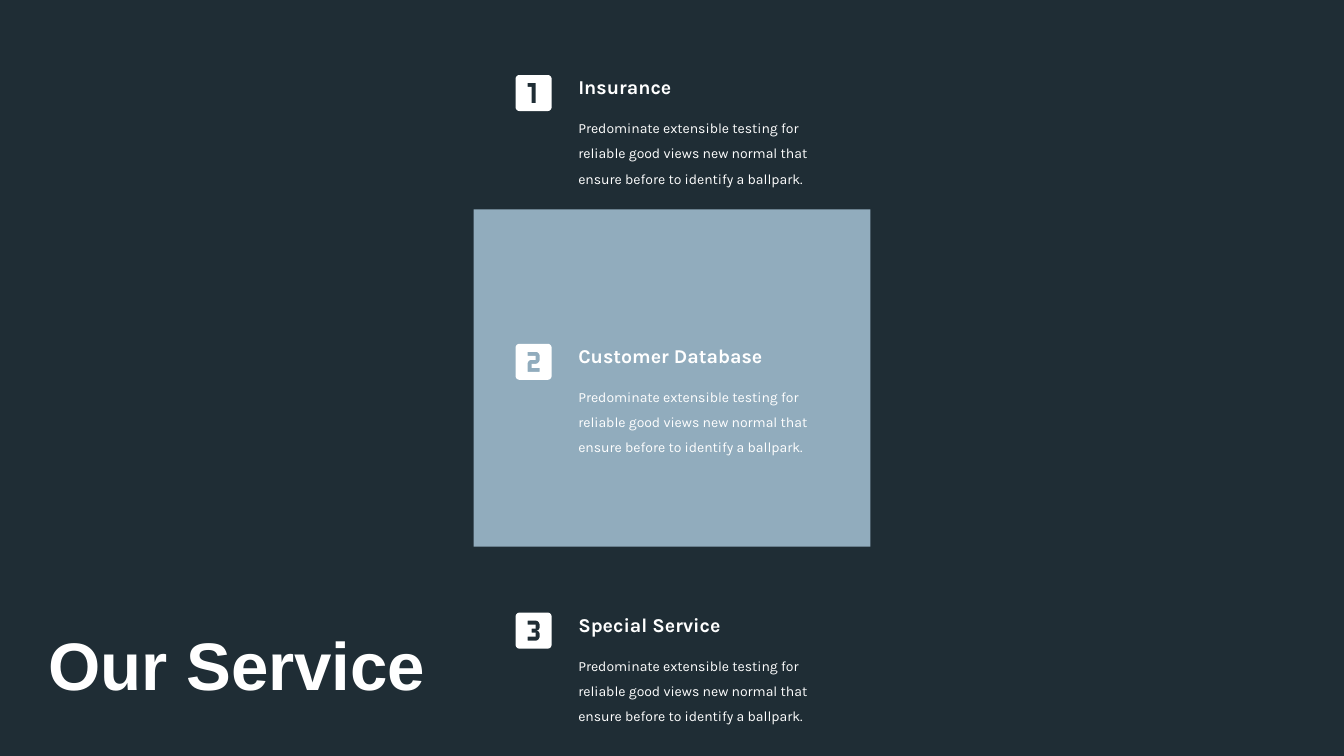
from math import cos, sin, pi, hypot
from pptx import Presentation
from pptx.util import Pt
from pptx.dml.color import RGBColor
from pptx.enum import shapes, text

DARK, BLUE, WHITE = "1F2D35", "91ACBD", "FFFFFF"
TITLE = "Our Service"
BODY = ("Predominate extensible testing for reliable good views "
        "new normal that ensure before to identify a ballpark.")
FRAME = [(0, 0, 2), (18, 0, 2), (18, 18, 2), (0, 18, 2)]
ONE = [(10, 14, 0), (10, 4, 0), (6, 4, 0), (6, 6, 0), (8, 6, 0), (8, 14, 0)]
TWO = [(12, 4, 2), (6, 4, 0), (6, 6, 0), (10, 6, 0), (10, 8, 0), (6, 8, 2),
       (6, 14, 0), (12, 14, 0), (12, 12, 0), (8, 12, 0), (8, 10, 0), (12, 10, 2)]
THREE = [(12, 4, 2), (6, 4, 0), (6, 6, 0), (10, 6, 0), (10, 8, 0), (8, 8, 0),
         (8, 10, 0), (10, 10, 0), (10, 12, 0), (6, 12, 0), (6, 14, 0),
         (12, 14, 2), (12, 9, 1.5), (10.5, 9, 0), (12, 9, 1.5)]
ITEMS = [("Insurance", ONE), ("Customer Database", TWO), ("Special Service", THREE)]

TOP, PITCH = 53.6, 192
ICON_X, TEXT_X = 368.3, 413.1
UNIT, STEPS = 1.43, 8


def color(code):
    return RGBColor.from_string(code)


def paint(shape, code):
    shape.shadow.inherit = False
    shape.fill.solid()
    shape.fill.fore_color.rgb = color(code)
    shape.line.fill.background()


def write(shape, words, size, font, bold, gap=None):
    frame = shape.text_frame
    frame.word_wrap = True
    frame.auto_size = text.MSO_AUTO_SIZE.SHAPE_TO_FIT_TEXT
    frame.vertical_anchor = text.MSO_ANCHOR.TOP
    frame.margin_left = frame.margin_right = 0
    frame.margin_top = frame.margin_bottom = 0
    para = frame.paragraphs[0]
    para.alignment = text.PP_ALIGN.LEFT
    if gap:
        para.line_spacing = gap
    run = para.add_run()
    run.text = words
    run.font.size = Pt(size)
    run.font.name = font
    run.font.bold = bold
    run.font.color.rgb = color(WHITE)


def toward(start, end, dist):
    ratio = dist / hypot(end[0] - start[0], end[1] - start[1])
    return [s + (e - s) * ratio for s, e in zip(start[:2], end[:2])]


def outline(corners):
    points = []
    for i, (x, y, r) in enumerate(corners):
        if not r:
            points.append((x * 100, y * 100))
            continue
        a = toward((x, y), corners[i - 1], r)
        b = toward((x, y), corners[(i + 1) % len(corners)], r)
        mid = (a[0] + b[0] - x, a[1] + b[1] - y)
        for k in range(STEPS + 1):
            t = pi / 2 * k / STEPS
            points.append(tuple(
                100 * (m + (p - m) * cos(t) + (q - m) * sin(t))
                for m, p, q in zip(mid, a, b)))
    return points


def icon(slide, digit, left, top):
    frame, hole = outline(FRAME), outline(digit)
    form = slide.shapes.build_freeform(*frame[0], scale=Pt(UNIT) / 100)
    form.add_line_segments(frame[1:], close=True)
    form.move_to(*hole[0])
    form.add_line_segments(hole[1:], close=True)
    paint(form.convert_to_shape(Pt(left), Pt(top)), WHITE)


def label(slide, left, top, width, height, *style):
    box = slide.shapes.add_textbox(Pt(left), Pt(top), Pt(width), Pt(height))
    write(box, *style)


def main():
    deck = Presentation()
    deck.slide_width, deck.slide_height = Pt(960), Pt(540)
    slide = deck.slides.add_slide(deck.slide_layouts[5])
    slide.background.fill.solid()
    slide.background.fill.fore_color.rgb = color(DARK)

    title = slide.shapes.title
    title.left, title.top = Pt(34.6), Pt(445)
    title.width, title.height = Pt(295.2), Pt(58.2)
    write(title, TITLE, 48, "Arial", True)

    panel = slide.shapes.add_shape(
        shapes.MSO_SHAPE.RECTANGLE, Pt(338.3), Pt(149.5), Pt(283.4), Pt(241))
    paint(panel, BLUE)

    for i, (head, digit) in enumerate(ITEMS):
        top = TOP + i * PITCH
        icon(slide, digit, ICON_X, top)
        label(slide, TEXT_X, top, 186, 17, head, 14, "Karla", True)
        label(slide, TEXT_X, top + 25.8, 165, 54.5, BODY, 10, "Karla", False, 1.5)

    deck.save("out.pptx")


if __name__ == "__main__":
    main()
